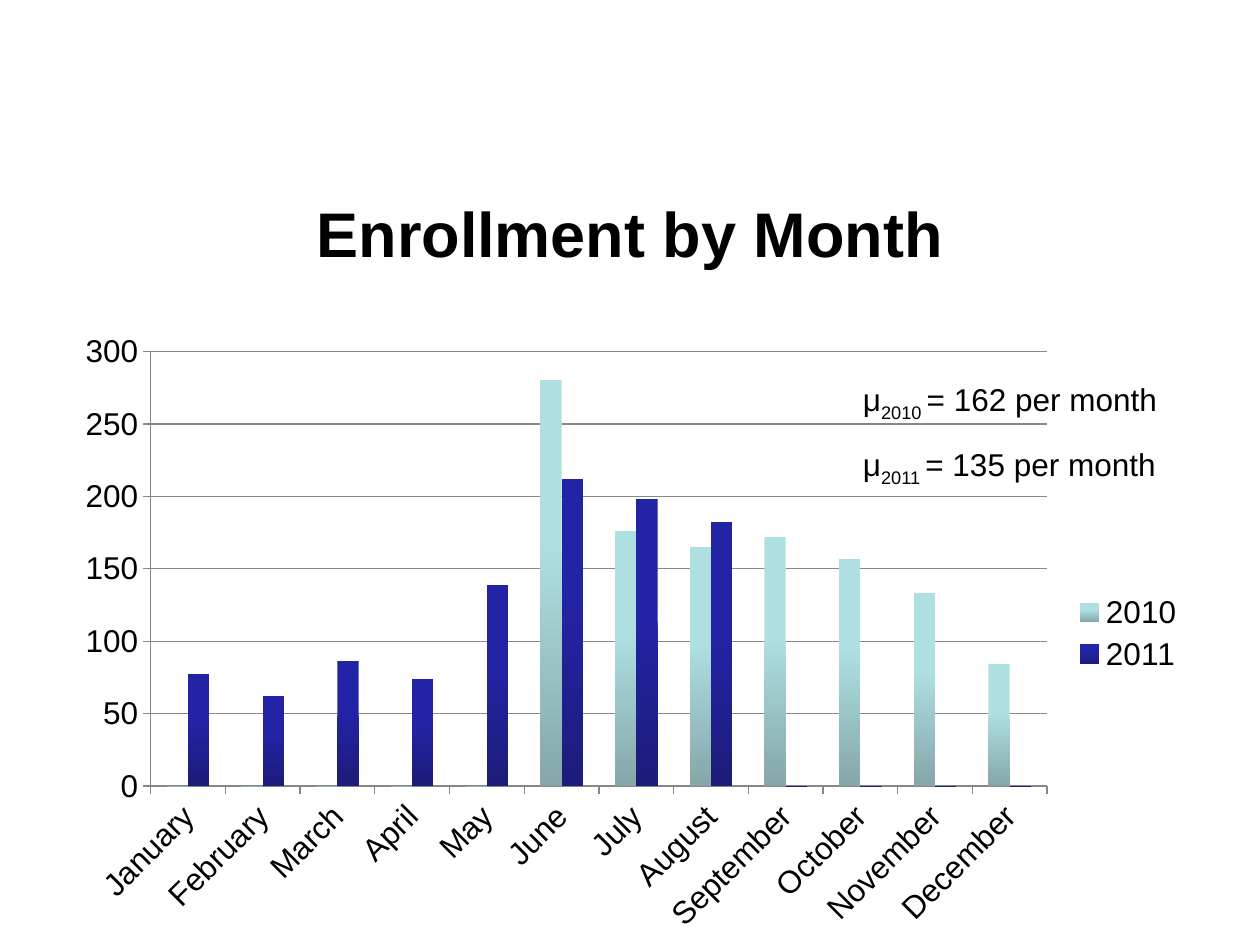
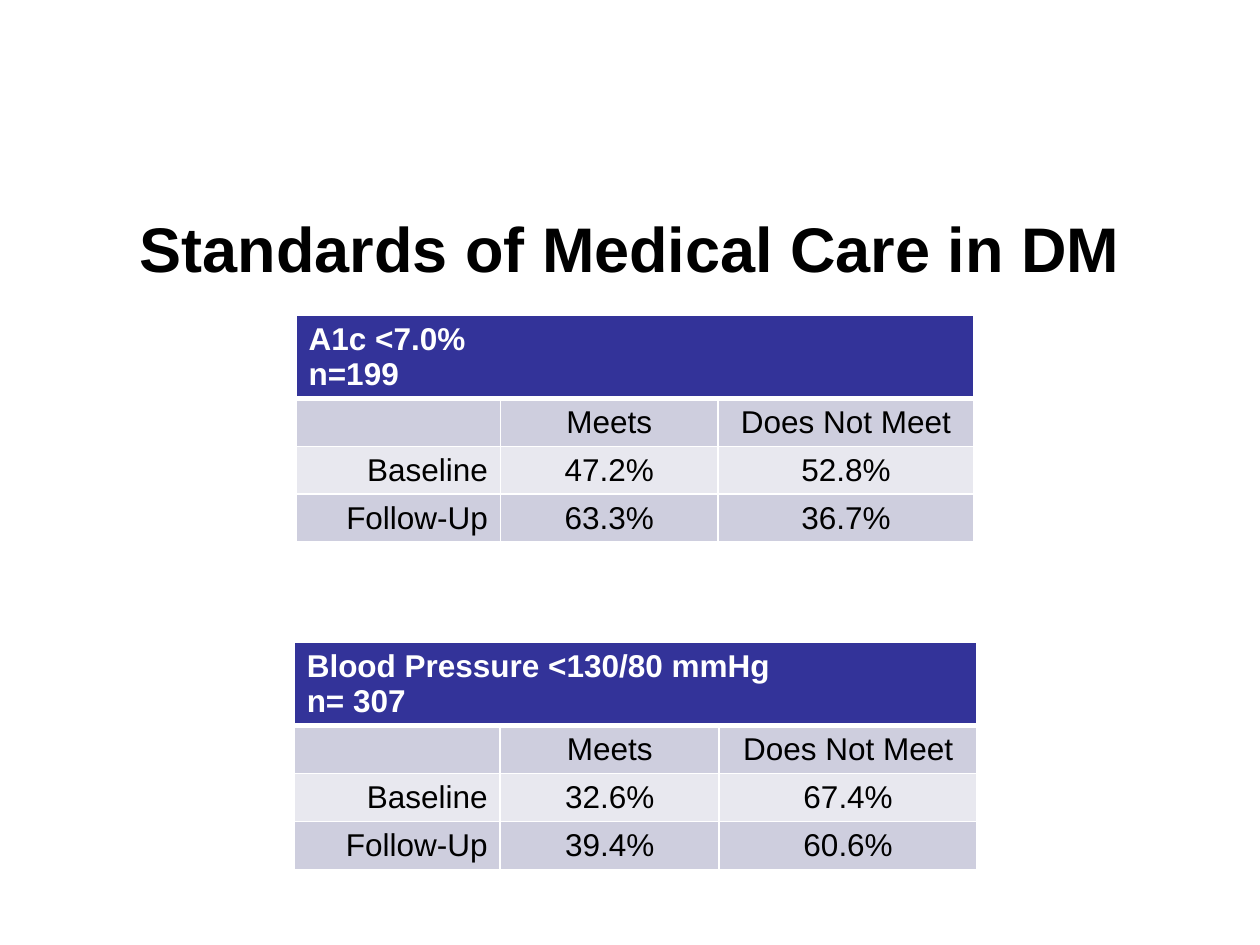
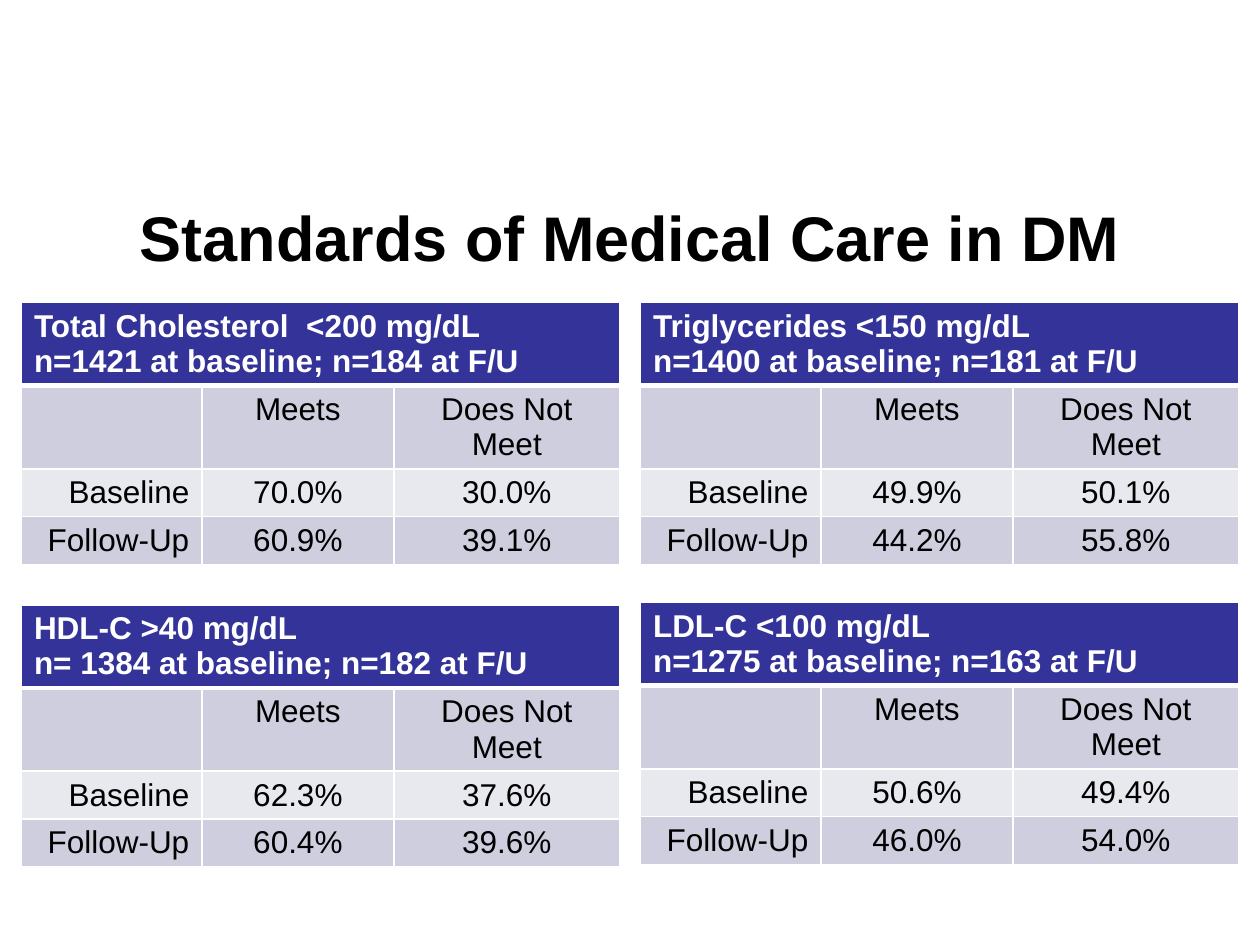
from lxml.etree import SubElement
from pptx import Presentation
from pptx.chart.data import CategoryChartData
from pptx.dml.color import RGBColor
from pptx.enum.chart import XL_CHART_TYPE, XL_LEGEND_POSITION as LEGEND
from pptx.enum.chart import XL_TICK_MARK as TICK
from pptx.enum.text import MSO_ANCHOR as ANCHOR, MSO_AUTO_SIZE as AUTO, PP_ALIGN as AL
from pptx.oxml.ns import qn
from pptx.util import Inches, Pt

WIDTH, HEIGHT = Inches(10), Inches(7.5)
FONT, BODY_PT, TITLE_PT = "Arial", 18, 36

BLACK = RGBColor(0x00, 0x00, 0x00)
WHITE = RGBColor(0xFF, 0xFF, 0xFF)
GRAY = RGBColor(0x87, 0x87, 0x87)
NAVY = RGBColor(0x33, 0x33, 0x99)
BAND_DARK = RGBColor(0xCE, 0xCE, 0xDE)
BAND_LIGHT = RGBColor(0xE8, 0xE8, 0xEF)
# Top and bottom colour of each year's columns
BAR_COLORS = [
    (RGBColor(0xAE, 0xDF, 0xE1), RGBColor(0x85, 0xA7, 0xA9)),
    (RGBColor(0x23, 0x23, 0xA6), RGBColor(0x1C, 0x1C, 0x7A)),
]

# Relative widths of table columns; rows as percent of the slide height
COL_WEIGHTS = (1.43, 1.52, 1.79)
ONE_LINE, TWO_LINES = 5.05, 8.67

MONTHS = ["January", "February", "March", "April", "May", "June", "July",
          "August", "September", "October", "November", "December"]
ENROLLMENT = {
    "2010": [0, 0, 0, 0, 0, 280, 176, 165, 172, 157, 133, 84],
    "2011": [77, 62, 86, 74, 139, 212, 198, 182, 0, 0, 0, 0],
}
MEANS = [("2010", 162, 39.6), ("2011", 135, 46.4)]

# Each table: left, top, width; heading lines; baseline and follow-up values
GLUCOSE_AND_PRESSURE = [
    ((23.5, 33.35, 53.8), ["A1c <7.0%", "n=199"],
     [("47.2%", "52.8%"), ("63.3%", "36.7%")]),
    ((23.35, 68, 54.2), ["Blood Pressure <130/80 mmHg", "n= 307"],
     [("32.6%", "67.4%"), ("39.4%", "60.6%")]),
]
LIPIDS = [
    ((1.7, 32, 47.5),
     ["Total Cholesterol  <200 mg/dL", "n=1421 at baseline; n=184 at F/U"],
     [("70.0%", "30.0%"), ("60.9%", "39.1%")]),
    ((50.83, 32, 47.5),
     ["Triglycerides <150 mg/dL", "n=1400 at baseline; n=181 at F/U"],
     [("49.9%", "50.1%"), ("44.2%", "55.8%")]),
    ((1.7, 64, 47.5),
     ["HDL-C >40 mg/dL", "n= 1384 at baseline; n=182 at F/U"],
     [("62.3%", "37.6%"), ("60.4%", "39.6%")]),
    ((50.83, 63.75, 47.5),
     ["LDL-C <100 mg/dL", "n=1275 at baseline; n=163 at F/U"],
     [("50.6%", "49.4%"), ("46.0%", "54.0%")]),
]


def across(percent):
    return int(WIDTH * percent / 100)


def down(percent):
    return int(HEIGHT * percent / 100)


def place(left, top, width, height):
    """Turn percentages of the slide into a box."""
    return across(left), down(top), across(width), down(height)


def add_run(p, text, color=BLACK, bold=False, size=BODY_PT):
    r = p.add_run()
    r.text = text
    font = r.font
    font.name, font.size, font.bold = FONT, Pt(size), bold
    font.color.rgb = color
    return r


def add_titled_slide(prs, title, height):
    slide = prs.slides.add_slide(prs.slide_layouts[5])
    sp = slide.shapes.title
    sp.left, sp.top, sp.width, sp.height = place(5, 17.8, 90, height)
    tf = sp.text_frame
    tf.vertical_anchor = ANCHOR.MIDDLE
    p = tf.paragraphs[0]
    p.alignment = AL.CENTER
    add_run(p, title, bold=True, size=TITLE_PT)
    return slide


def style_axis(axis):
    axis.major_tick_mark = TICK.OUTSIDE
    axis.format.line.color.rgb = GRAY


def add_enrollment_chart(slide, box):
    data = CategoryChartData()
    data.categories = MONTHS
    for year, counts in ENROLLMENT.items():
        data.add_series(year, counts)
    chart = slide.shapes.add_chart(XL_CHART_TYPE.COLUMN_CLUSTERED, *box, data).chart
    chart.has_title = False
    font = chart.font
    font.name, font.size = FONT, Pt(BODY_PT)
    font.color.rgb = BLACK
    chart.has_legend = True
    chart.legend.position = LEGEND.RIGHT
    chart.legend.include_in_layout = False

    for axis in (chart.category_axis, chart.value_axis):
        style_axis(axis)
    chart.value_axis.major_gridlines.format.line.color.rgb = GRAY

    plot = chart.plots[0]
    plot.gap_width, plot.overlap, plot.vary_by_categories = 150, 0, False
    for series, colors in zip(plot.series, BAR_COLORS):
        fill = series.format.fill
        fill.gradient()
        fill.gradient_angle = 270
        for stop, color, position in zip(fill.gradient_stops, colors, (0.4, 1)):
            stop.color.rgb, stop.position = color, position


def add_mean(slide, year, mean, top):
    sp = slide.shapes.add_textbox(*place(67.5, top, 28.3, 5.33))
    tf = sp.text_frame
    tf.word_wrap = True
    tf.auto_size = AUTO.SHAPE_TO_FIT_TEXT
    p = tf.paragraphs[0]
    add_run(p, "μ")
    add_run(p, f"{year} ").font._element.set("baseline", "-25000")
    add_run(p, f"= {mean} per month")


def style_cell(cell, fill, bottom=1):
    """Give a cell white borders, the lower one of its own width, and a fill."""
    tc_pr = cell._tc.get_or_add_tcPr()
    for side, points in (("L", 1), ("R", 1), ("T", 1), ("B", bottom)):
        line = SubElement(tc_pr, qn(f"a:ln{side}"), w=str(Pt(points)))
        solid = SubElement(line, qn("a:solidFill"))
        SubElement(solid, qn("a:srgbClr"), val=str(WHITE))
    cell.fill.solid()
    cell.fill.fore_color.rgb = fill


def size_empty_paragraph(p):
    """Keep an empty cell no taller than its neighbours."""
    end = SubElement(p._p, qn("a:endParaRPr"), sz=str(BODY_PT * 100))
    SubElement(end, qn("a:latin"), typeface=FONT)


def add_standard_table(slide, spot, heading, results, label_height):
    left, top, width = spot
    heights = [TWO_LINES, label_height, ONE_LINE, ONE_LINE]
    box = place(left, top, width, sum(heights))
    table = slide.shapes.add_table(len(heights), len(COL_WEIGHTS), *box).table
    for column, weight in zip(table.columns, COL_WEIGHTS):
        column.width = int(box[2] * weight / sum(COL_WEIGHTS))
    for row, height in zip(table.rows, heights):
        row.height = down(height)

    head = table.cell(0, 0)
    head.merge(table.cell(0, len(COL_WEIGHTS) - 1))
    for cell in table.rows[0].cells:
        style_cell(cell, NAVY, bottom=3)
    tf = head.text_frame
    for i, line in enumerate(heading):
        p = tf.add_paragraph() if i else tf.paragraphs[0]
        add_run(p, line, WHITE, bold=True)

    baseline, follow_up = results
    body = [("", "Meets", "Does Not Meet"),
            ("Baseline", *baseline), ("Follow-Up", *follow_up)]
    for r, texts in enumerate(body, start=1):
        for c, text in enumerate(texts):
            cell = table.cell(r, c)
            style_cell(cell, BAND_DARK if r % 2 else BAND_LIGHT)
            p = cell.text_frame.paragraphs[0]
            p.alignment = AL.CENTER if c else AL.RIGHT
            if text:
                add_run(p, text)
            else:
                size_empty_paragraph(p)


def add_enrollment_slide(prs):
    slide = add_titled_slide(prs, "Enrollment by Month", 13.6)
    add_enrollment_chart(slide, place(5, 34, 90, 66))
    for year, mean, top in MEANS:
        add_mean(slide, year, mean, top)


def add_standards_slide(prs, title_height, tables, label_height):
    slide = add_titled_slide(prs, "Standards of Medical Care in DM", title_height)
    for spot, heading, results in tables:
        add_standard_table(slide, spot, heading, results, label_height)


def main():
    prs = Presentation()
    prs.slide_width, prs.slide_height = WIDTH, HEIGHT
    add_enrollment_slide(prs)
    add_standards_slide(prs, 16.7, GLUCOSE_AND_PRESSURE, ONE_LINE)
    add_standards_slide(prs, 14.4, LIPIDS, TWO_LINES)
    prs.save("out.pptx")


if __name__ == "__main__":
    main()
